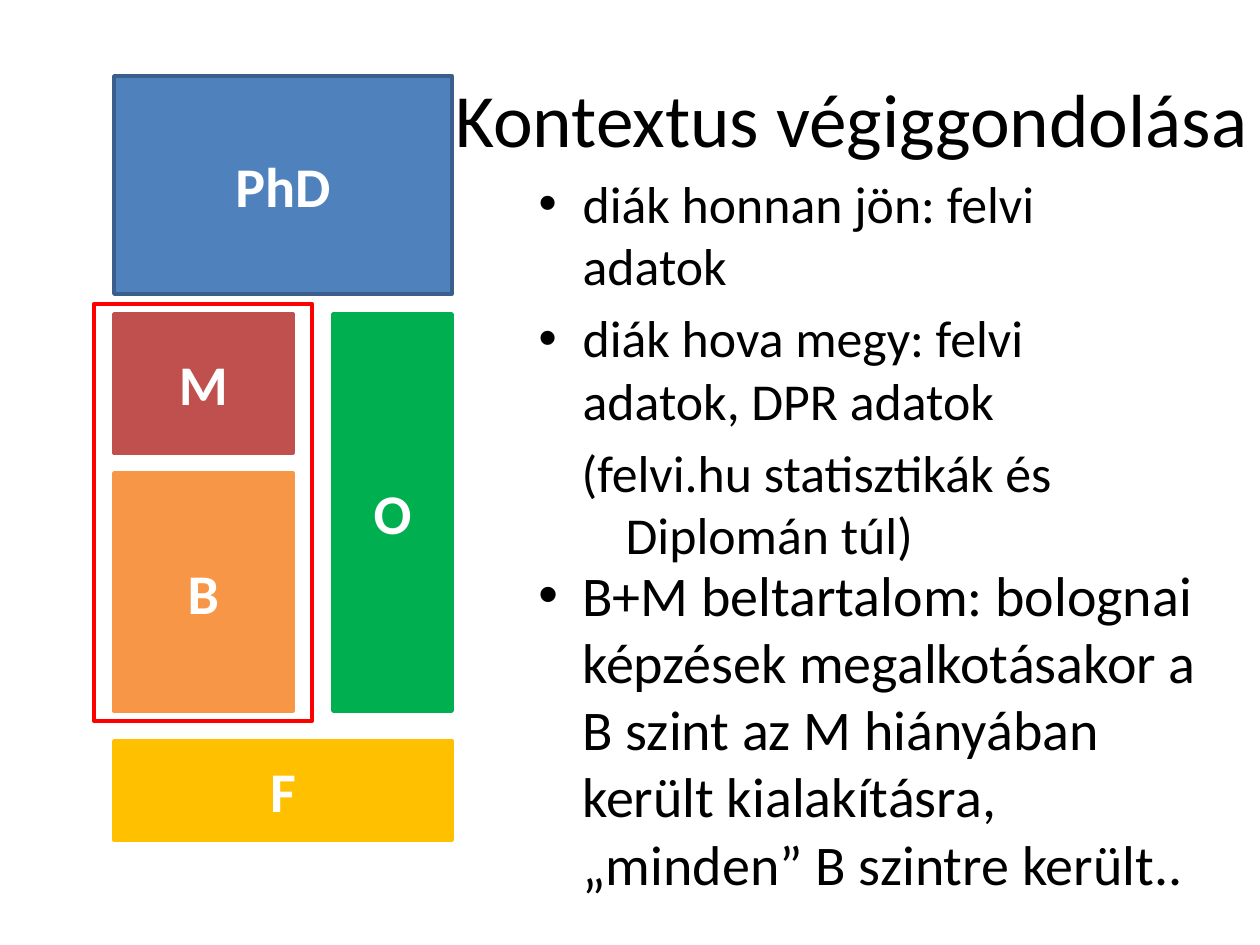
from lxml.etree import SubElement
from pptx import Presentation
from pptx.dml.color import RGBColor
from pptx.enum.shapes import MSO_SHAPE
from pptx.enum.text import MSO_ANCHOR, MSO_AUTO_SIZE, PP_ALIGN
from pptx.oxml.ns import qn
from pptx.util import Emu, Pt

PX = 914400 / 126
FONT = "Calibri"
COLORS = {
    "text": "000000", "white": "FFFFFF", "phd": "4F81BD", "edge": "3A5F8C",
    "master": "C0504D", "bachelor": "F79646", "whole": "00B050",
    "base": "FFC000", "frame": "FF0000",
}


def put(para, text, size, color="text", bold=False):
    run = para.add_run()
    run.text = text
    font = run.font
    font.name, font.size, font.bold = FONT, Pt(size), bold
    font.color.rgb = RGBColor.from_string(COLORS[color])


def fill_list(frame, items, size):
    frame.word_wrap = True
    for i, (text, left, mark) in enumerate(items):
        para = frame.paragraphs[0] if i == 0 else frame.add_paragraph()
        props = para._p.get_or_add_pPr()
        props.set("marL", str(int(left * PX)))
        props.set("indent", str(int(-44 * PX)))
        if mark:
            SubElement(props, qn("a:buFont")).set("typeface", "Arial")
            SubElement(props, qn("a:buChar")).set("char", mark)
        else:
            SubElement(props, qn("a:buNone"))
        para.space_before = Pt(6 if i else 0)
        put(para, text, size)


deck = Presentation()
deck.slide_width, deck.slide_height = Emu(int(1260 * PX)), Emu(int(945 * PX))
slide = deck.slides.add_slide(deck.slide_layouts[1])
shapes = slide.shapes

# Title
title = shapes.title
title.left, title.top, title.width, title.height = [
    Emu(int(n * PX)) for n in (63, 38, 1197, 158)]
frame = title.text_frame
frame.auto_size = MSO_AUTO_SIZE.NONE
frame.vertical_anchor = MSO_ANCHOR.MIDDLE
frame.paragraphs[0].alignment = PP_ALIGN.RIGHT
put(frame.paragraphs[0], "Kontextus végiggondolása", 43)

# Student paths
body = slide.placeholders[1]
body.left, body.top, body.width, body.height = [
    Emu(int(n * PX)) for n in (520, 165, 677, 377)]
body.text_frame.auto_size = MSO_AUTO_SIZE.NONE
fill_list(body.text_frame, [
    ("diák honnan jön: felvi adatok", 50, "•"),
    ("diák hova megy: felvi adatok, DPR adatok", 50, "•"),
    ("(felvi.hu statisztikák és Diplomán túl)", 93, None),
], 29.6)

# Training levels, with the red frame around B and M
blocks = [
    ("B", 114, 473, 179, 238, "bachelor", "bachelor", 2),
    ("M", 114, 314, 179, 139, "master", "master", 2),
    ("O", 333, 314, 119, 397, "whole", "whole", 2),
    ("F", 114, 741, 338, 99, "base", "base", 2),
    ("PhD", 114, 76, 338, 218, "phd", "edge", 2),
    ("", 94, 304, 218, 417, None, "frame", 2.5),
]
for text, left, top, wide, high, fill, line, weight in blocks:
    box = shapes.add_shape(
        MSO_SHAPE.RECTANGLE, *[Emu(int(n * PX)) for n in (left, top, wide, high)])
    box.shadow.inherit = False
    box.line.color.rgb = RGBColor.from_string(COLORS[line])
    box.line.width = Pt(weight)
    if fill:
        box.fill.solid()
        box.fill.fore_color.rgb = RGBColor.from_string(COLORS[fill])
    else:
        box.fill.background()
    if text:
        frame = box.text_frame
        frame.vertical_anchor = MSO_ANCHOR.MIDDLE
        frame.paragraphs[0].alignment = PP_ALIGN.CENTER
        put(frame.paragraphs[0], text, 32, "white", True)

# Content of B and M
note = shapes.add_textbox(*[Emu(int(n * PX)) for n in (520, 554, 704, 391)])
note.text_frame.auto_size = MSO_AUTO_SIZE.SHAPE_TO_FIT_TEXT
fill_list(note.text_frame, [
    ("B+M beltartalom: bolognai képzések megalkotásakor a B szint az M "
     "hiányában került kialakításra, „minden” B szintre került..", 50, "•"),
], 32)

deck.save("out.pptx")
